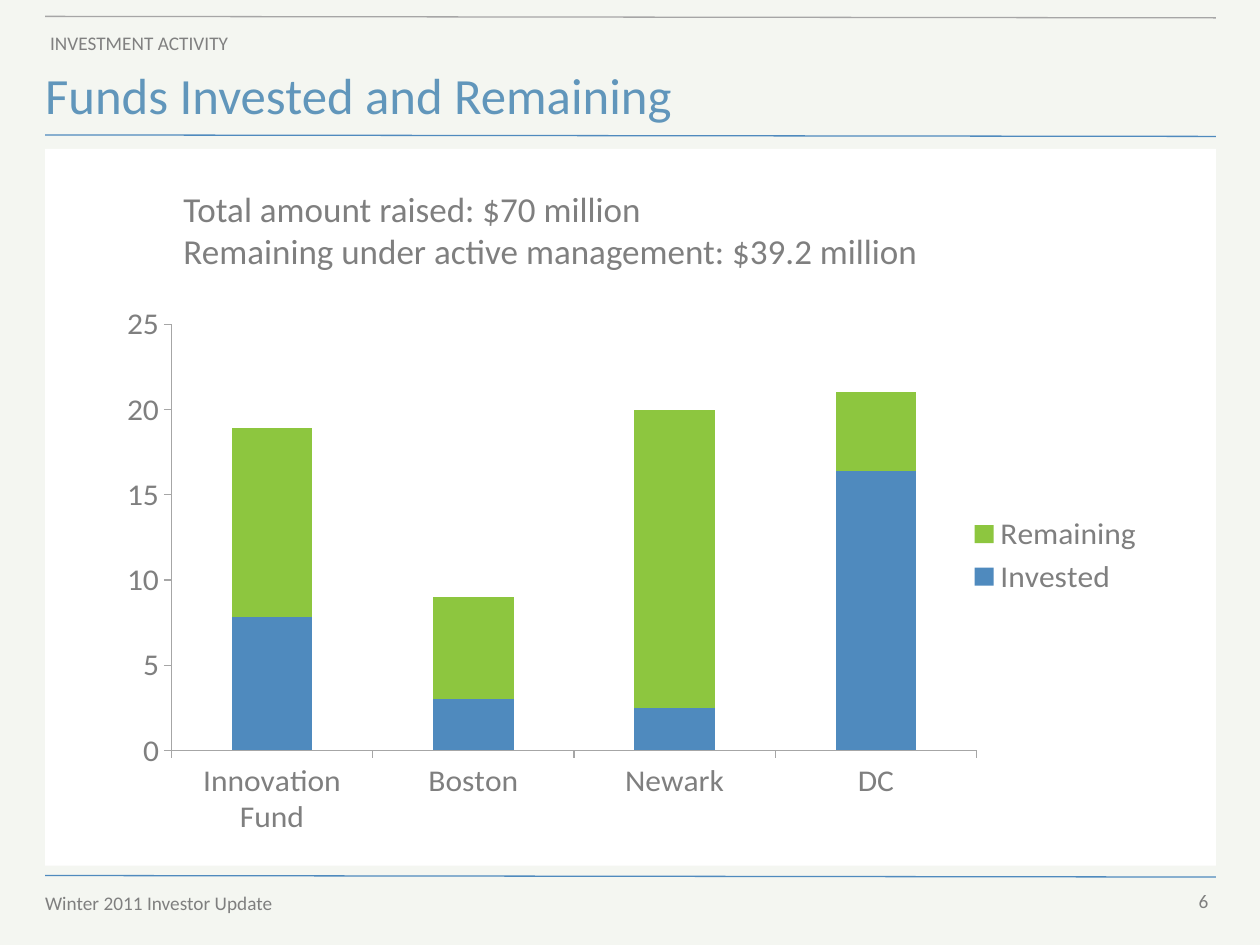
from lxml import etree
from pptx import Presentation
from pptx.chart.data import CategoryChartData
from pptx.dml.color import RGBColor
from pptx.enum.chart import XL_CHART_TYPE, XL_LEGEND_POSITION, XL_TICK_MARK
from pptx.enum.shapes import MSO_CONNECTOR, MSO_SHAPE
from pptx.enum.text import MSO_ANCHOR, PP_ALIGN
from pptx.oxml.ns import qn
from pptx.util import Cm, Pt

STACKED = XL_CHART_TYPE.COLUMN_STACKED
RIGHT_SIDE = XL_LEGEND_POSITION.RIGHT
OUT = XL_TICK_MARK.OUTSIDE
STRAIGHT = MSO_CONNECTOR.STRAIGHT
RECT = MSO_SHAPE.RECTANGLE
TOP, MID = MSO_ANCHOR.TOP, MSO_ANCHOR.MIDDLE
LEFT, RIGHT = PP_ALIGN.LEFT, PP_ALIGN.RIGHT
FONT = "Calibri"
HUES = {
    "page": "F4F6F1", "panel": "FFFFFF", "rule": "A6A6A6", "blue": "4F8ABE",
    "green": "8DC63F", "title": "6196BB", "text": "7F7F7F", "head": "808080",
}


def hue(name):
    return RGBColor.from_string(HUES[name])


def add_text(box, lines, size, color, anchor=TOP, align=LEFT):
    area = slide.shapes.add_textbox(*map(Cm, box))
    frame = area.text_frame
    frame.word_wrap = True
    frame.vertical_anchor = anchor
    for i, line in enumerate(lines):
        para = frame.paragraphs[0] if i == 0 else frame.add_paragraph()
        para.alignment = align
        run = para.add_run()
        run.text = line
        run.font.name = FONT
        run.font.size = Pt(size)
        run.font.color.rgb = hue(color)


deck = Presentation()
deck.slide_width, deck.slide_height = Cm(25.4), Cm(19.05)
slide = deck.slides.add_slide(deck.slide_layouts[6])
slide.background.fill.solid()
slide.background.fill.fore_color.rgb = hue("page")

for top, color in ((0.33, "rule"), (2.72, "blue"), (17.65, "blue")):
    rule = slide.shapes.add_connector(
        STRAIGHT, Cm(0.91), Cm(top), Cm(24.51), Cm(top + 0.03))
    rule.line.color.rgb = hue(color)
    rule.line.width = Pt(0.75)
    etree.SubElement(rule.element.spPr, qn("a:effectLst"))

panel = slide.shapes.add_shape(RECT, Cm(0.91), Cm(3), Cm(23.6), Cm(14.45))
panel.shadow.inherit = False
panel.fill.solid()
panel.fill.fore_color.rgb = hue("panel")
panel.line.fill.background()

add_text((0.66, 1.14, 22.86, 1.52), ["Funds Invested and Remaining"], 29, "title", MID)
add_text((18.69, 17.65, 5.92, 1.02), ["6"], 11, "text", MID, RIGHT)
add_text((0.66, 17.83, 6.53, 0.74), ["Winter 2011 Investor Update"], 11, "text", MID)
add_text((0.76, 0.51, 14.6, 0.76), ["INVESTMENT ACTIVITY"], 11, "head")

data = CategoryChartData()
data.categories = ["Innovation Fund", "Boston", "Newark", "DC"]
data.add_series("Invested", (7.8, 3, 2.5, 16.4))
data.add_series("Remaining", (11.1, 6, 17.5, 4.6))
chart = slide.shapes.add_chart(
    STACKED, Cm(1.96), Cm(6.02), Cm(21.36), Cm(10.82), data).chart
chart.has_title = False
chart.font.name = FONT
chart.font.size = Pt(18)
chart.font.color.rgb = hue("text")
chart.has_legend = True
chart.legend.position = RIGHT_SIDE
chart.legend.include_in_layout = False

plot = chart.plots[0]
plot.gap_width = 150
plot.overlap = 100
plot.vary_by_categories = False
for series, color in zip(plot.series, ("blue", "green")):
    series.format.fill.solid()
    series.format.fill.fore_color.rgb = hue(color)

for axis in (chart.category_axis, chart.value_axis):
    axis.major_tick_mark = OUT
    axis.has_major_gridlines = False
    axis.format.line.color.rgb = hue("rule")
    axis.format.line.width = Pt(0.75)
scale = chart.value_axis
scale.minimum_scale, scale.maximum_scale, scale.major_unit = 0, 25, 5
scale.tick_labels.number_format = "0"
scale.tick_labels.number_format_is_linked = False

area = chart.element.find(".//" + qn("c:plotArea")) if hasattr(chart, "element") else chart._chartSpace.find(".//" + qn("c:plotArea"))
for old in area.findall(qn("c:layout")):
    area.remove(old)
layout = etree.Element(qn("c:layout"))
area.insert(0, layout)
manual = etree.SubElement(layout, qn("c:manualLayout"))
for tag, val in (("layoutTarget", "inner"), ("xMode", "edge"), ("yMode", "edge"),
                 ("x", "0.07"), ("y", "0.05"), ("w", "0.76"), ("h", "0.83")):
    etree.SubElement(manual, qn("c:" + tag)).set("val", val)

add_text((3.45, 3.66, 20.4, 1.96), [
    "Total amount raised: $70 million",
    "Remaining under active management: $39.2 million",
], 20, "text")

deck.save("out.pptx")
